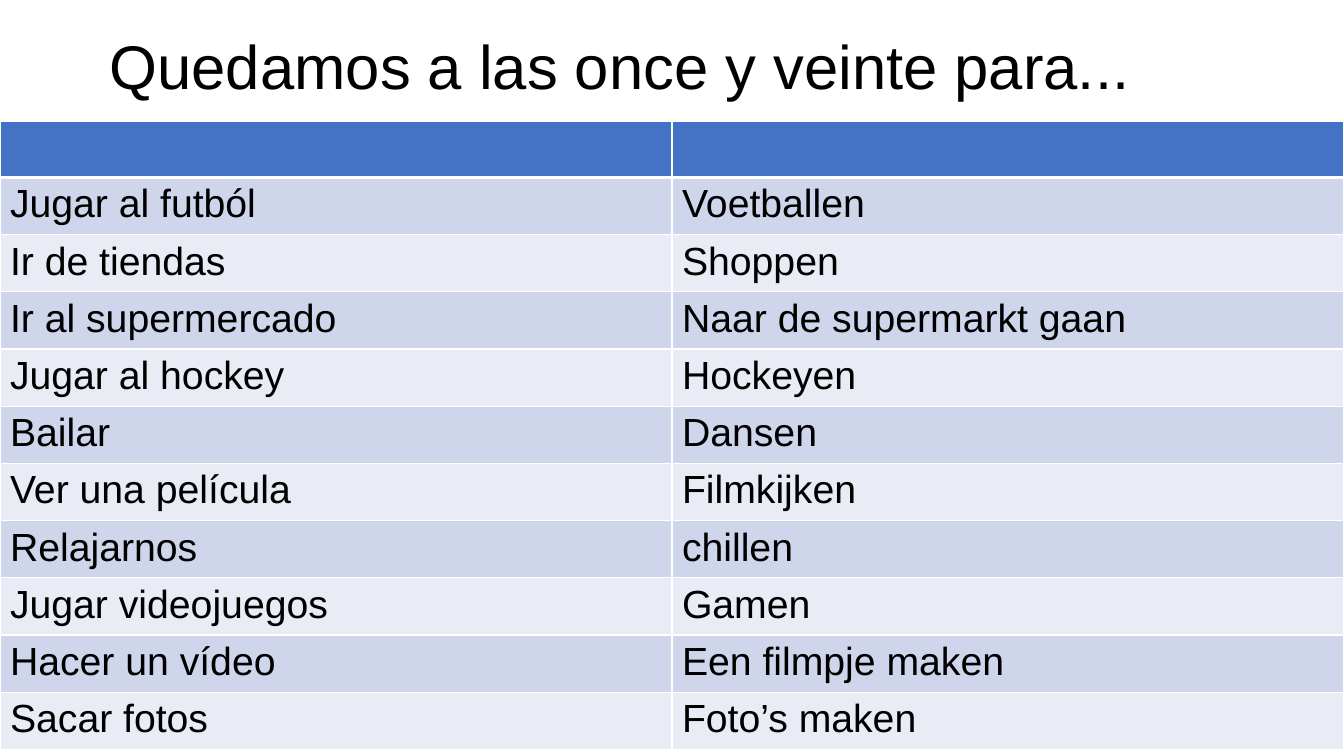
from dataclasses import dataclass

from lxml import etree
from pptx import Presentation
from pptx.dml.color import RGBColor
from pptx.enum.text import MSO_ANCHOR
from pptx.oxml.ns import qn
from pptx.util import Emu, Pt

MIDDLE = MSO_ANCHOR.MIDDLE
PX = 9525
SLIDE_WIDTH, SLIDE_HEIGHT = 1280, 720
ROW_HEIGHT = 53
THIN, THICK = 1, 3


@dataclass(frozen=True)
class Theme:
    """Colours, font and type sizes of the slide."""

    font: str = "Arial"
    ink: str = "000000"
    header: str = "4472C4"
    bands: tuple = ("CFD5EA", "E9EBF5")
    border: str = "FFFFFF"
    title_size: int = 44
    cell_size: int = 28


THEME = Theme()
TITLE = "Quedamos a las once y veinte para..."
ACTIVITIES = [
    ("Jugar al futból", "Voetballen"),
    ("Ir de tiendas", "Shoppen"),
    ("Ir al supermercado", "Naar de supermarkt gaan"),
    ("Jugar al hockey", "Hockeyen"),
    ("Bailar", "Dansen"),
    ("Ver una película", "Filmkijken"),
    ("Relajarnos", "chillen"),
    ("Jugar videojuegos", "Gamen"),
    ("Hacer un vídeo", "Een filmpje maken"),
    ("Sacar fotos", "Foto’s maken"),
]


def px(length):
    """Turn a length in px into EMU."""
    return Emu(length * PX)


def add_run(paragraph, wording, size):
    """Add one run in the theme font and ink."""
    run = paragraph.add_run()
    run.text = wording
    run.font.name = THEME.font
    run.font.size = Pt(size)
    run.font.color.rgb = RGBColor.from_string(THEME.ink)


def set_borders(cell, top, bottom):
    """Draw the four cell borders, with top and bottom widths in points."""
    properties = cell._tc.get_or_add_tcPr()
    widths = {"a:lnL": THIN, "a:lnR": THIN, "a:lnT": top, "a:lnB": bottom}
    for position, (side, width) in enumerate(widths.items()):
        line = etree.Element(qn(side), w=str(Pt(width)))
        fill = etree.SubElement(line, qn("a:solidFill"))
        etree.SubElement(fill, qn("a:srgbClr"), val=THEME.border)
        properties.insert(position, line)


def add_title(slide, left, top, width, height):
    """Place the title, centred vertically in its box."""
    frame = slide.shapes.add_textbox(px(left), px(top), px(width), px(height)).text_frame
    frame.word_wrap = True
    frame.vertical_anchor = MIDDLE
    heading = frame.paragraphs[0]
    heading.line_spacing = 0.9
    add_run(heading, TITLE, THEME.title_size)


def add_vocabulary(slide, left, top, width):
    """Place the two-language table under an empty header row."""
    rows = [("", ""), *ACTIVITIES]
    columns = len(rows[0])
    table = slide.shapes.add_table(
        len(rows), columns, px(left), px(top), px(width), px(ROW_HEIGHT * len(rows))
    ).table
    for column in table.columns:
        column.width = px(width // columns)
    for row_index, phrases in enumerate(rows):
        table.rows[row_index].height = px(ROW_HEIGHT)
        colour = THEME.bands[(row_index - 1) % 2] if row_index else THEME.header
        for column_index, phrase in enumerate(phrases):
            cell = table.cell(row_index, column_index)
            cell.fill.solid()
            cell.fill.fore_color.rgb = RGBColor.from_string(colour)
            set_borders(
                cell,
                top=THICK if row_index == 1 else THIN,
                bottom=THICK if row_index == 0 else THIN,
            )
            if phrase:
                add_run(cell.text_frame.paragraphs[0], phrase, THEME.cell_size)


def main():
    """Build and save the slide."""
    deck = Presentation()
    deck.slide_width, deck.slide_height = px(SLIDE_WIDTH), px(SLIDE_HEIGHT)
    slide = deck.slides.add_slide(deck.slide_layouts[6])
    add_title(slide, 95, -3, 1104, 139)
    add_vocabulary(slide, 0, 116, SLIDE_WIDTH)
    deck.save("out.pptx")


if __name__ == "__main__":
    main()
